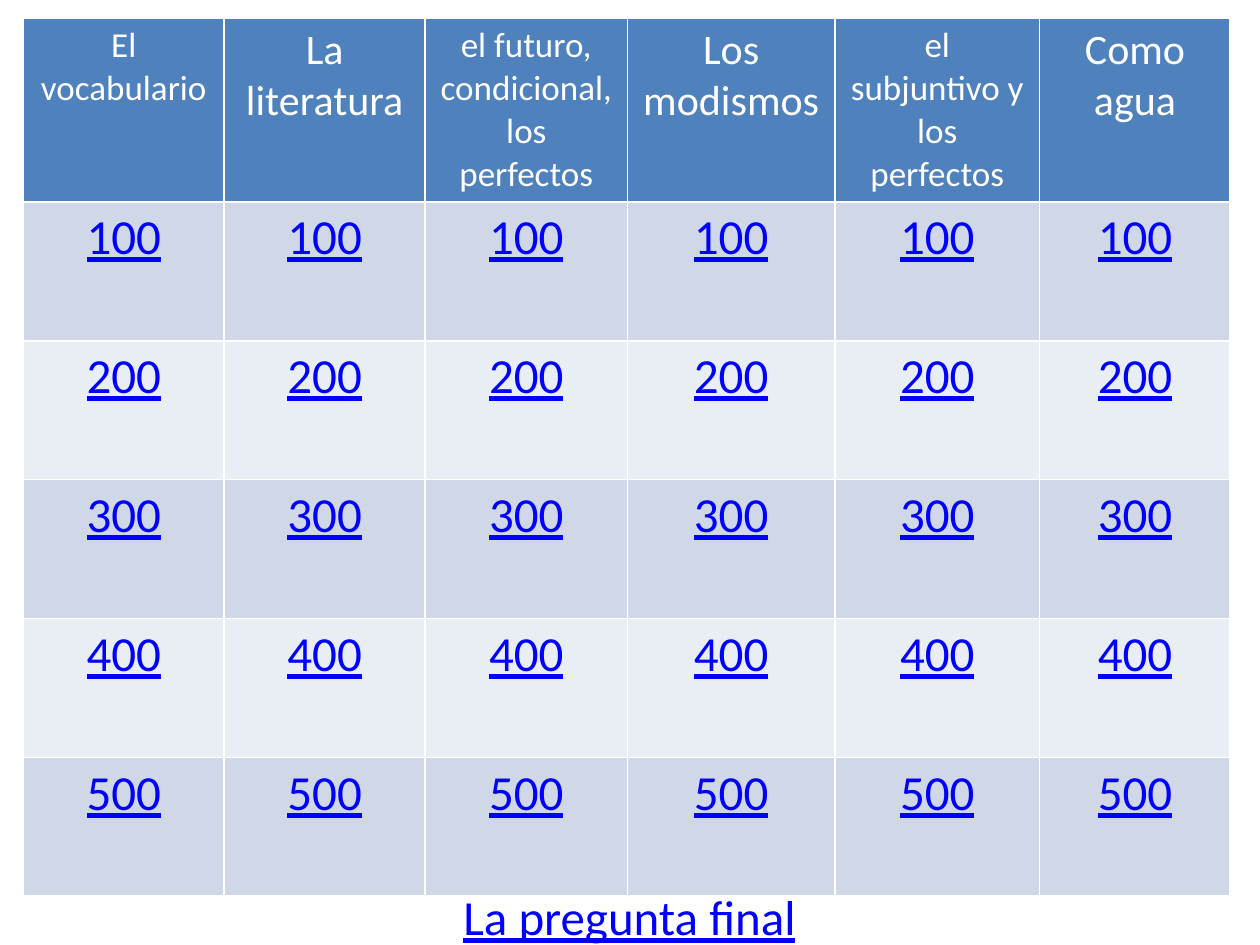
from lxml.etree import SubElement
from pptx import Presentation
from pptx.dml.color import RGBColor
from pptx.enum.text import MSO_AUTO_SIZE as AutoSize, PP_ALIGN as Align
from pptx.oxml.ns import qn
from pptx.util import Cm, Pt

FONT = "Calibri"
WHITE, LINK_BLUE, HEADER_BLUE = "FFFFFF", "0000FF", "4F81BD"
BANDS = ("D0D8E8", "E9EDF4")
CATEGORIES = [
    ("El vocabulario", 20),
    ("La literatura", 24),
    ("el futuro, condicional,los perfectos", 20),
    ("Los modismos", 24),
    ("el subjuntivo y los perfectos", 20),
    ("Como agua", 24),
]
POINTS = range(100, 600, 100)
COLUMN_WIDTHS = (4.05, 4.05, 4.08, 4.18, 4.13, 3.84)
HEADER_HEIGHT, ROW_HEIGHT = 3.7, 2.8


def color(hex_code):
    return RGBColor.from_string(hex_code)


def write(frame, text, size, hex_code, underline=False):
    frame.text = text
    para = frame.paragraphs[0]
    para.alignment = Align.CENTER
    font = para.runs[0].font
    font.name, font.size, font.bold = FONT, Pt(size), False
    font.underline = underline
    font.color.rgb = color(hex_code)


def style_cell(cell, fill):
    """Give the cell thin white borders and a solid fill."""
    properties = cell._tc.get_or_add_tcPr()
    for side in ("lnL", "lnR", "lnT", "lnB"):
        line = SubElement(properties, qn(f"a:{side}"), w=str(Pt(1)))
        solid = SubElement(line, qn("a:solidFill"))
        SubElement(solid, qn("a:srgbClr"), val=WHITE)
    cell.fill.solid()
    cell.fill.fore_color.rgb = color(fill)


def add_board(page, left, top):
    height = HEADER_HEIGHT + ROW_HEIGHT * len(POINTS)
    board = page.shapes.add_table(
        len(POINTS) + 1, len(CATEGORIES),
        Cm(left), Cm(top), Cm(sum(COLUMN_WIDTHS)), Cm(height)).table
    for column, width in zip(board.columns, COLUMN_WIDTHS):
        column.width = Cm(width)
    for index, row in enumerate(board.rows):
        row.height = Cm(ROW_HEIGHT if index else HEADER_HEIGHT)

    for column, (category, size) in enumerate(CATEGORIES):
        header = board.cell(0, column)
        style_cell(header, HEADER_BLUE)
        write(header.text_frame, category, size, WHITE)
        for row, points in enumerate(POINTS, start=1):
            cell = board.cell(row, column)
            style_cell(cell, BANDS[(row - 1) % 2])
            write(cell.text_frame, str(points), 28, LINK_BLUE, underline=True)


def add_final_question(page, left, top, width, height):
    box = page.shapes.add_textbox(Cm(left), Cm(top), Cm(width), Cm(height))
    frame = box.text_frame
    frame.word_wrap = True
    frame.auto_size = AutoSize.SHAPE_TO_FIT_TEXT
    write(frame, "La pregunta final", 28, LINK_BLUE, underline=True)


def main():
    deck = Presentation()
    deck.slide_width, deck.slide_height = Cm(25.4), Cm(19.05)
    page = deck.slides.add_slide(deck.slide_layouts[6])
    add_board(page, 0.47, 0.36)
    add_final_question(page, 7.52, 17.75, 10.34, 1.45)
    deck.save("out.pptx")


if __name__ == "__main__":
    main()
